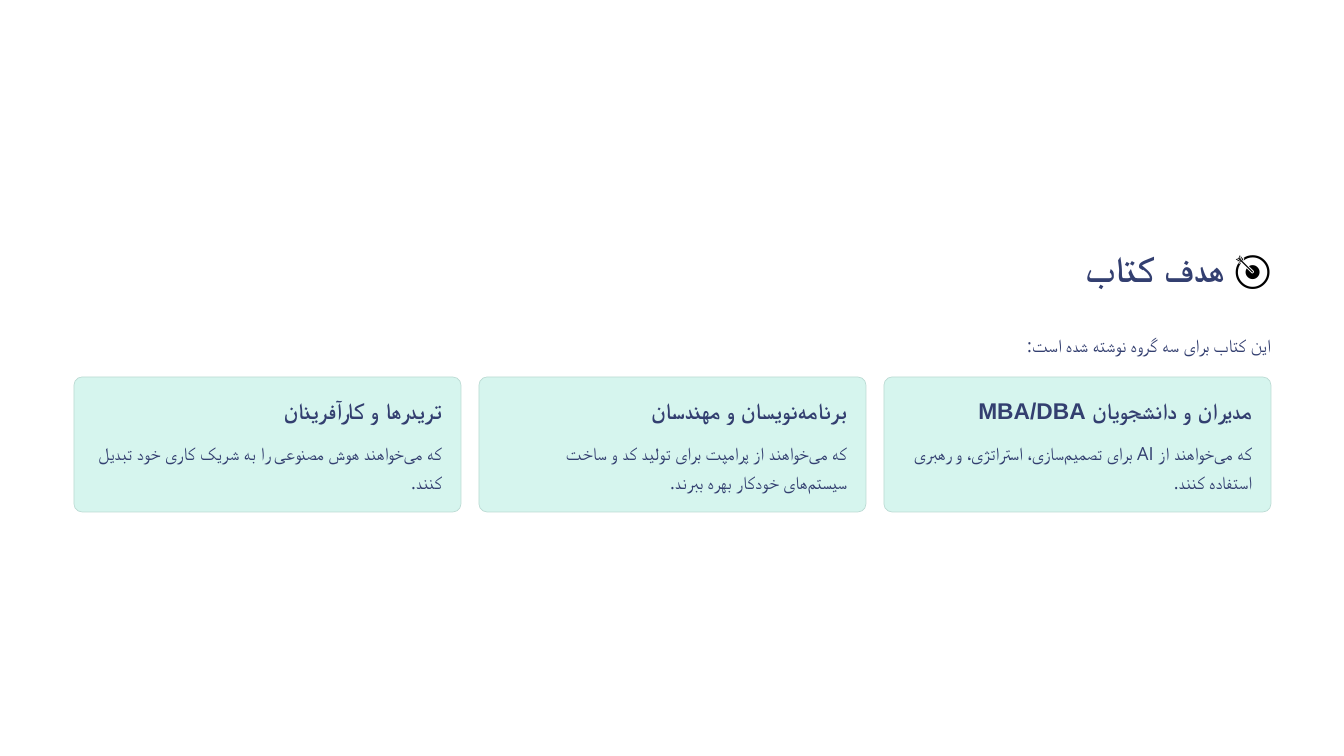
from lxml import etree
from pptx import Presentation
from pptx.dml.color import RGBColor
from pptx.enum.shapes import MSO_SHAPE
from pptx.enum.text import PP_ALIGN
from pptx.oxml.ns import qn
from pptx.util import Pt

ROUNDED = MSO_SHAPE.ROUNDED_RECTANGLE
RIGHT = PP_ALIGN.RIGHT

WHITE = RGBColor(0xFF, 0xFF, 0xFF)
BLACK = RGBColor(0, 0, 0)
NAVY = RGBColor(0x33, 0x3F, 0x70)
MINT = RGBColor(0xD6, 0xF5, 0xEE)
MINT_EDGE = RGBColor(0xBC, 0xDB, 0xD4)

HEADING_FONT = "Arial"
BODY_FONT = "Open Sans"
ZWNJ = chr(0x200C)

LEFT, CONTENT_W = 74, 1197
CARD_TOP, CARD_W, CARD_H, CARD_GAP, CARD_PAD = 377, 387, 135, 18, 19

GROUPS = [
    ("مدیران و دانشجویان MBA/DBA",
     f"که می{ZWNJ}خواهند از AI برای تصمیم{ZWNJ}سازی، استراتژی، و رهبری استفاده کنند."),
    (f"برنامه{ZWNJ}نویسان و مهندسان",
     f"که می{ZWNJ}خواهند از پرامپت برای تولید کد و ساخت سیستم{ZWNJ}های خودکار بهره ببرند."),
    ("تریدرها و کارآفرینان",
     f"که می{ZWNJ}خواهند هوش مصنوعی را به شریک کاری خود تبدیل کنند."),
]


def px(n):
    return round(n * 914400 / 84)


class Page:
    def __init__(self, prs):
        self.slide = prs.slides.add_slide(prs.slide_layouts[6])
        fill = self.slide.background.fill
        fill.solid()
        fill.fore_color.rgb = WHITE

    def text(self, x, y, w, h, runs, size, spacing, font, bold=False):
        sp = self.slide.shapes.add_textbox(px(x), px(y), px(w), px(h))
        tf = sp.text_frame
        tf.word_wrap = True
        tf.margin_left = tf.margin_right = tf.margin_top = tf.margin_bottom = 0
        p = tf.paragraphs[0]
        p.alignment = RIGHT
        p.line_spacing = Pt(spacing)
        p._p.get_or_add_pPr().set("rtl", "1")
        p.font.name = font
        p.font.size = Pt(size)
        p.font.bold = bold
        etree.SubElement(p.font._element, qn("a:cs"), typeface=font)
        for text, color in runs:
            r = p.add_run()
            r.text = text
            r.font.color.rgb = color

    def heading(self, x, y, w, h, runs, size, spacing):
        self.text(x, y, w, h, runs, size, spacing, HEADING_FONT, True)

    def body(self, x, y, w, h, text):
        self.text(x, y, w, h, [(text, NAVY)], 15.5, 25, BODY_FONT)

    def card(self, x, title, text):
        sp = self.slide.shapes.add_shape(
            ROUNDED, px(x), px(CARD_TOP), px(CARD_W), px(CARD_H))
        sp.adjustments[0] = 0.06
        sp.shadow.inherit = False
        sp.fill.solid()
        sp.fill.fore_color.rgb = MINT
        sp.line.color.rgb = MINT_EDGE
        sp.line.width = Pt(0.6)
        inner_x, inner_w = x + CARD_PAD, CARD_W - 2 * CARD_PAD
        self.heading(inner_x, CARD_TOP + 19, inner_w, 29, [(title, NAVY)], 19.5, 24)
        self.body(inner_x, CARD_TOP + 58, inner_w, 58, text)


def main():
    prs = Presentation()
    prs.slide_width, prs.slide_height = px(1344), px(756)
    page = Page(prs)
    page.heading(906, 244, 365, 47, [("🎯", BLACK), (" هدف کتاب", NAVY)], 31, 39)
    page.body(LEFT, 327, CONTENT_W, 29, "این کتاب برای سه گروه نوشته شده است:")
    for i, (title, text) in enumerate(GROUPS):
        x = LEFT + CONTENT_W - CARD_W - i * (CARD_W + CARD_GAP)
        page.card(x, title, text)
    prs.save("out.pptx")


if __name__ == "__main__":
    main()
